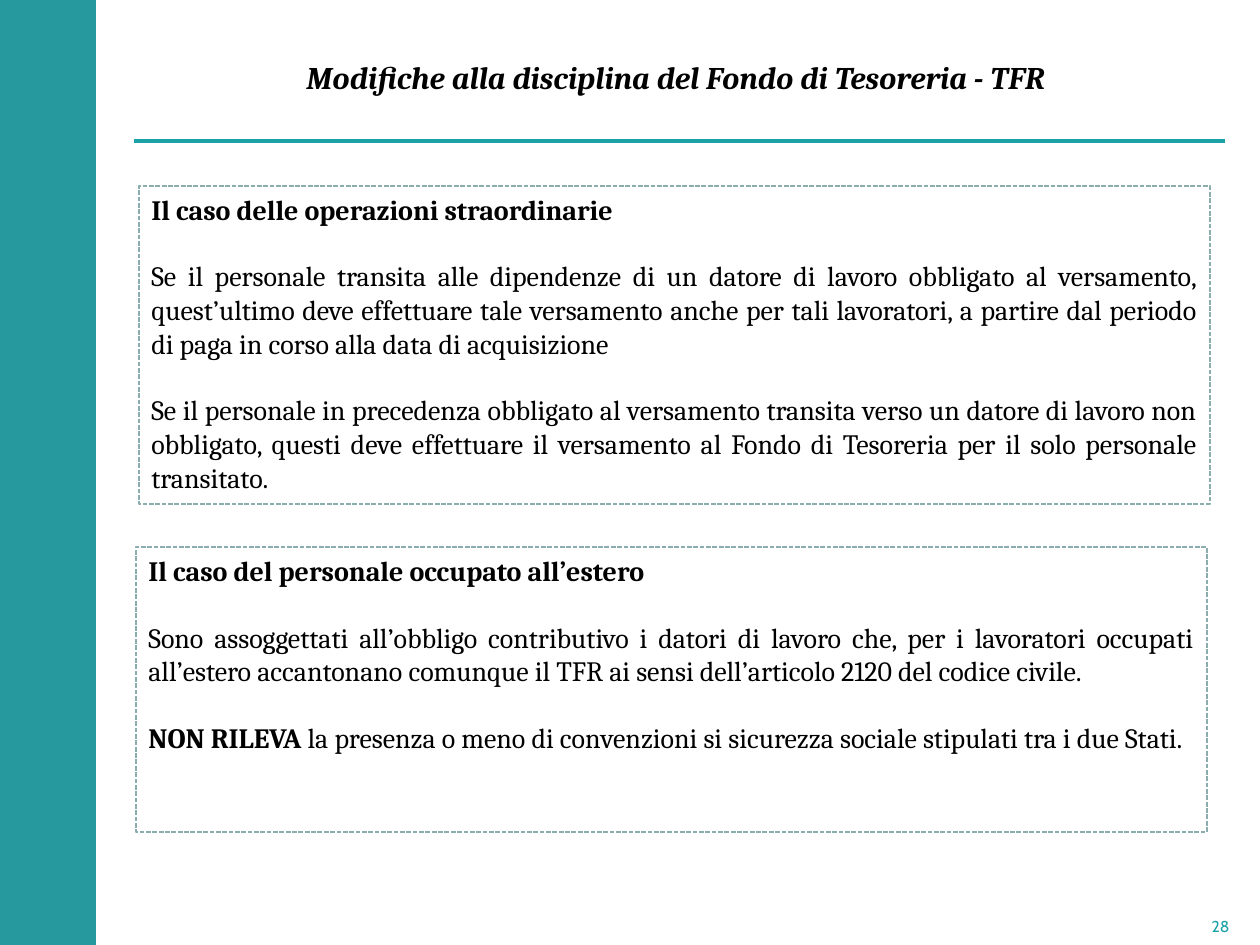
from pptx import Presentation
from pptx.dml.color import RGBColor
from pptx.enum.dml import MSO_LINE
from pptx.enum.shapes import MSO_CONNECTOR, MSO_SHAPE
from pptx.enum.text import MSO_ANCHOR, PP_ALIGN
from pptx.util import Emu, Pt
from lxml import etree
from pptx.oxml.ns import qn

TITLE = "Modifiche alla disciplina del Fondo di Tesoreria - TFR"
PAGE = "28"
# Each case: left, top, width, height, then paragraphs of (text, bold) runs
CASES = [
    (139, 186, 1071, 318, [
        [("Il caso delle operazioni straordinarie", True)],
        [("Se il personale transita alle dipendenze di un datore di lavoro "
          "obbligato al versamento, quest’ultimo deve effettuare tale versamento "
          "anche per tali lavoratori, a partire dal periodo di paga in corso "
          "alla data di acquisizione", False)],
        [("Se il personale in precedenza obbligato al versamento transita verso "
          "un datore di lavoro non obbligato, questi deve effettuare il "
          "versamento al Fondo di Tesoreria per il solo personale transitato.",
          False)],
    ]),
    (136, 547, 1071, 285, [
        [("Il caso del personale occupato all’estero", True)],
        [("Sono assoggettati all’obbligo contributivo i datori di lavoro che, "
          "per i lavoratori occupati all’estero accantonano comunque il TFR ai "
          "sensi dell’articolo 2120 del codice civile.", False)],
        [("NON RILEVA ", True),
         ("la presenza o meno di convenzioni si sicurezza sociale stipulati tra "
          "i due Stati.", False)],
    ]),
]
BAR, ACCENT, BORDER, WHITE, BLACK = "25999D", "1BA2A7", "8CADAE", "FFFFFF", "000000"


def px(n):
    return Emu(round(n * 914400 / 126))


def rgb(color):
    return RGBColor.from_string(color)


def style(font, name, size, color, bold=False, italic=False):
    font.name, font.size, font.bold, font.italic = name, Pt(size), bold, italic
    font.color.rgb = rgb(color)


def add_rect(slide, box, fill):
    sp = slide.shapes.add_shape(MSO_SHAPE.RECTANGLE, *map(px, box))
    sp.shadow.inherit = False
    sp.fill.solid()
    sp.fill.fore_color.rgb = rgb(fill)
    sp.line.fill.background()
    return sp


def add_case(slide, box, paragraphs):
    sp = add_rect(slide, box, WHITE)
    sp.line.color.rgb = rgb(BORDER)
    sp.line.width = Pt(0.9)
    sp.line.dash_style = MSO_LINE.SQUARE_DOT
    tf = sp.text_frame
    tf.word_wrap = True
    tf.vertical_anchor = MSO_ANCHOR.TOP
    for i, runs in enumerate(paragraphs):
        p = tf.add_paragraph() if i else tf.paragraphs[0]
        p.alignment = PP_ALIGN.JUSTIFY
        p.space_before = Pt(19 if i else 0)
        for text, bold in runs:
            r = p.add_run()
            r.text = text
            style(r.font, "Cambria", 16, BLACK, bold)


prs = Presentation()
prs.slide_width, prs.slide_height = px(1260), px(945)
slide = prs.slides.add_slide(prs.slide_layouts[5])

# Side bar
add_rect(slide, (0, 0, 96, 945), BAR)

# Title, raised above the middle by the bottom inset
title = slide.shapes.title
title.left, title.top, title.width, title.height = map(px, (93, 47, 1166, 97))
tf = title.text_frame
tf.text = TITLE
tf.vertical_anchor = MSO_ANCHOR.MIDDLE
tf.margin_bottom = px(43)
tf.paragraphs[0].alignment = PP_ALIGN.CENTER
style(tf.paragraphs[0].runs[0].font, "Cambria", 18, BLACK, True, True)

# Rule under the title
rule = slide.shapes.add_connector(MSO_CONNECTOR.STRAIGHT, *map(px, (134, 141, 1225, 141)))
rule.line.color.rgb = rgb(ACCENT)
rule.line.width = Pt(2.25)
etree.SubElement(rule._element.spPr, qn("a:effectLst"))

# Cases
for *box, paragraphs in CASES:
    add_case(slide, box, paragraphs)

# Page number
tf = slide.shapes.add_textbox(*map(px, (1181, 907, 79, 38))).text_frame
tf.word_wrap = True
tf.text = PAGE
tf.vertical_anchor = MSO_ANCHOR.MIDDLE
tf.paragraphs[0].alignment = PP_ALIGN.CENTER
style(tf.paragraphs[0].runs[0].font, "Cabin", 9, ACCENT)

prs.save("out.pptx")
